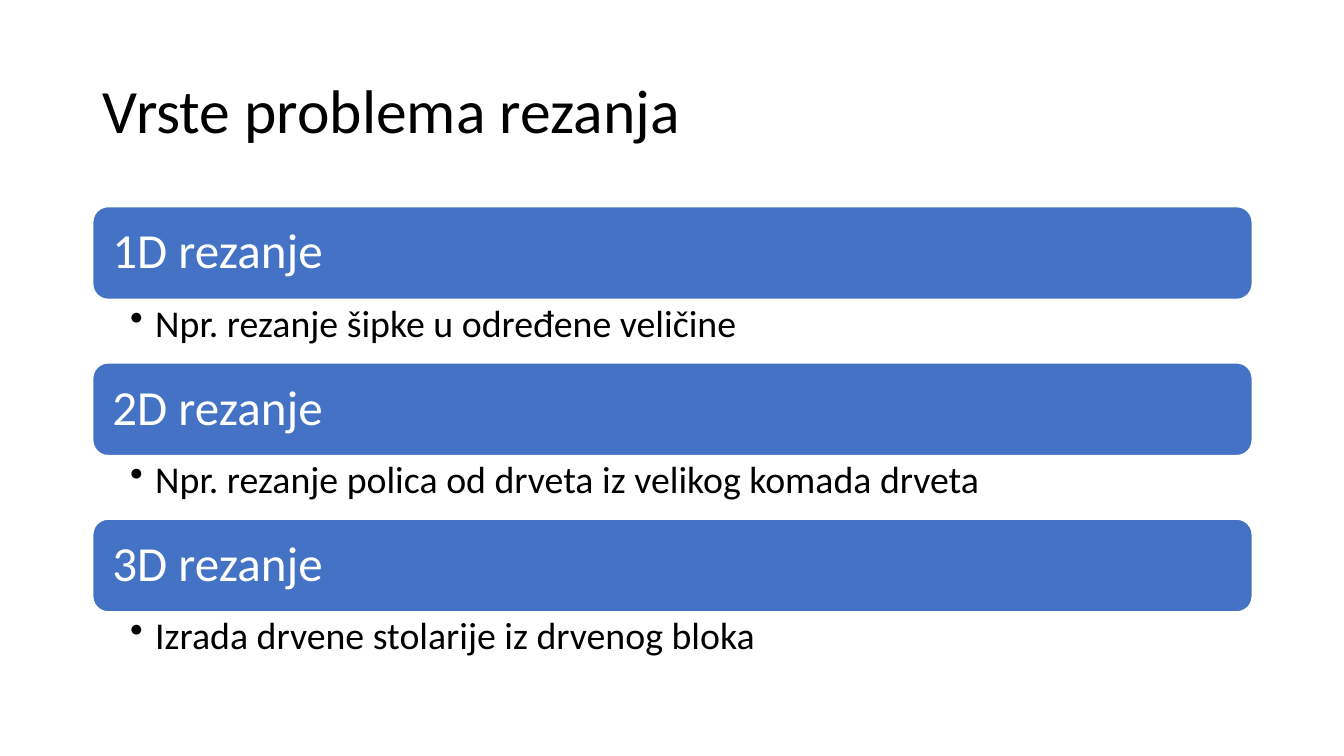
from pptx import Presentation
from pptx.dml.color import RGBColor
from pptx.enum.shapes import MSO_SHAPE
from pptx.enum.text import MSO_ANCHOR, PP_ALIGN
from pptx.util import Inches, Pt
from lxml.etree import SubElement
from pptx.oxml.ns import qn

TITLE = "Vrste problema rezanja"
CUTTING_TYPES = [
    ("1D rezanje", "Npr. rezanje šipke u određene veličine"),
    ("2D rezanje", "Npr. rezanje polica od drveta iz velikog komada drveta"),
    ("3D rezanje", "Izrada drvene stolarije iz drvenog bloka"),
]
COLORS = {"text": "000000", "bar": "4472C4", "light": "FFFFFF"}
FONT = "Calibri"
LEFT, WIDTH = 0.92, 11.5
TITLE_TOP, TITLE_HEIGHT = 0.4, 1.45
LIST_TOP, BAR_HEIGHT, EXAMPLE_HEIGHT = 2.05, 0.92, 0.63


def color(name):
    return RGBColor.from_string(COLORS[name])


def write(shape, text, size, color_name, anchor, insets):
    frame = shape.text_frame
    frame.word_wrap = True
    frame.vertical_anchor = anchor
    frame.margin_left, frame.margin_top, frame.margin_right, frame.margin_bottom = map(Inches, insets)
    paragraph = frame.paragraphs[0]
    paragraph.text = text
    paragraph.alignment = PP_ALIGN.LEFT
    paragraph.line_spacing = 0.9
    paragraph.font.name = FONT
    paragraph.font.size = Pt(size)
    paragraph.font.color.rgb = color(color_name)
    return paragraph


def add_text(slide, top, height, *text_settings):
    box = slide.shapes.add_textbox(Inches(LEFT), Inches(top), Inches(WIDTH), Inches(height))
    return write(box, *text_settings)


def add_bar(slide, top, text):
    bar = slide.shapes.add_shape(
        MSO_SHAPE.ROUNDED_RECTANGLE, Inches(LEFT), Inches(top), Inches(WIDTH), Inches(BAR_HEIGHT)
    )
    bar.shadow.inherit = False
    bar.fill.solid()
    bar.fill.fore_color.rgb = color("bar")
    bar.line.color.rgb = color("light")
    bar.line.width = Pt(1)
    write(bar, text, 35, "light", MSO_ANCHOR.MIDDLE, (0.15, 0.15, 0.15, 0.15))


def add_example(slide, top, text):
    paragraph = add_text(
        slide, top, EXAMPLE_HEIGHT, text, 27, "text", MSO_ANCHOR.TOP, (0.37, 0.05, 0.27, 0.05)
    )
    properties = paragraph._p.get_or_add_pPr()
    properties.set("marL", str(Inches(0.25)))
    properties.set("indent", str(Inches(-0.25)))
    SubElement(properties, qn("a:buChar")).set("char", "•")


def main():
    presentation = Presentation()
    presentation.slide_width = Inches(13.33)
    presentation.slide_height = Inches(7.5)
    slide = presentation.slides.add_slide(presentation.slide_layouts[6])
    add_text(
        slide, TITLE_TOP, TITLE_HEIGHT, TITLE, 44, "text", MSO_ANCHOR.MIDDLE, (0.1, 0.05, 0.1, 0.05)
    )
    for index, (heading, example) in enumerate(CUTTING_TYPES):
        top = LIST_TOP + index * (BAR_HEIGHT + EXAMPLE_HEIGHT)
        add_bar(slide, top, heading)
        add_example(slide, top + BAR_HEIGHT, example)
    presentation.save("out.pptx")


if __name__ == "__main__":
    main()
